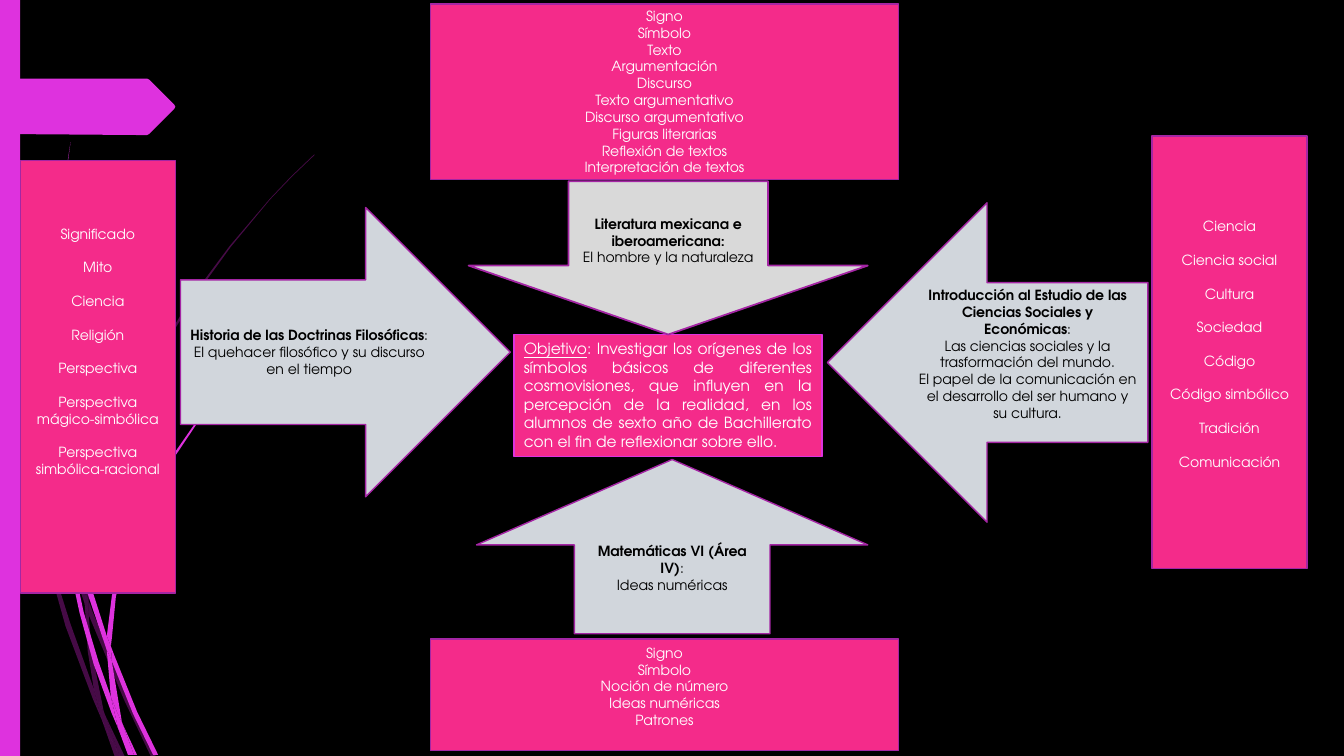
from lxml import etree
from pptx import Presentation
from pptx.dml.color import RGBColor
from pptx.enum.shapes import MSO_SHAPE
from pptx.enum.text import MSO_ANCHOR, PP_ALIGN
from pptx.oxml.ns import qn
from pptx.util import Cm, Pt

RECT = MSO_SHAPE.RECTANGLE
LEFT, RIGHT = MSO_SHAPE.LEFT_ARROW, MSO_SHAPE.RIGHT_ARROW
UP, DOWN = MSO_SHAPE.UP_ARROW, MSO_SHAPE.DOWN_ARROW
CENTER, JUSTIFY = PP_ALIGN.CENTER, PP_ALIGN.JUSTIFY
TOP, MIDDLE = MSO_ANCHOR.TOP, MSO_ANCHOR.MIDDLE

FONT = "TeX Gyre Adventor"
COLORS = {
    "back": "000000", "orchid": "DE32DE", "purple": "B01CB0", "edge": "A425A4",
    "pink": "F42B8A", "mist": "D1D6DC", "gray": "D9D9D9",
    "white": "FFFFFF", "black": "000000",
}
LINE = 12  # height in points of one line of 10 pt text
UNIT = Cm(2.54) / 100  # outline points are hundredths of an inch

DARK_STRANDS = [
    [(11, 350), (9, 322), (0, 282), (0, 299), (10, 344)],
    [(58, 522), (84, 599), (85, 586), (62, 520), (36, 434), (14, 345), (17, 376), (36, 450)],
    [(92, 607), (88, 596), (88, 610), (123, 694), (150, 751), (155, 751), (127, 692)],
    [(119, 751), (124, 751), (105, 711)],
    [(93, 683), (70, 619), (47, 546), (31, 469), (17, 376), (11, 350), (28, 470),
     (44, 546), (65, 621), (92, 693), (101, 714), (99, 707)],
    [(84, 599), (87, 646), (93, 683), (96, 692), (105, 711), (103, 706), (91, 646),
     (88, 610), (88, 608)],
    [(88, 584), (94, 522), (110, 462), (132, 405), (160, 349), (192, 296), (229, 245),
     (268, 198), (290, 175), (312, 154), (312, 153), (289, 175), (268, 197), (228, 244),
     (190, 295), (158, 348), (130, 404), (107, 461), (91, 522), (85, 584), (88, 596)],
    [(101, 714), (114, 751), (119, 751)],
    [(88, 608), (88, 596), (85, 586), (84, 599)],
    [(96, 692), (93, 683), (99, 707), (101, 714), (119, 751), (105, 711)],
]
BRIGHT_STRANDS = [
    [(7, 110), (17, 233), (33, 355), (56, 477), (57, 481), (55, 453), (36, 355),
     (19, 232), (8, 109), (5, 48), (4, 0), (3, 0), (4, 48)],
    [(88, 592), (106, 645), (106, 631), (93, 590), (75, 532), (60, 472), (64, 505), (75, 549)],
    [(113, 649), (110, 641), (111, 656), (132, 708), (152, 749), (157, 749), (136, 706)],
    [(110, 691), (98, 657), (83, 607), (72, 556), (64, 505), (57, 477), (68, 557),
     (79, 608), (93, 659), (111, 708), (117, 722), (116, 717)],
    [(60, 472), (58, 453), (54, 349), (58, 245), (63, 193), (70, 141), (62, 193),
     (56, 245), (52, 349), (55, 449)],
    [(133, 749), (136, 749), (122, 719)],
    [(111, 633), (115, 592), (125, 552), (158, 476), (205, 406), (231, 374), (245, 359),
     (261, 344), (260, 344), (245, 358), (231, 373), (204, 405), (156, 474), (122, 551),
     (111, 591), (106, 631), (110, 641)],
    [(117, 722), (127, 749), (131, 749)],
    [(106, 645), (110, 691), (116, 706), (122, 719), (121, 716), (111, 656), (109, 651)],
    [(106, 645), (109, 651), (111, 656), (110, 641), (106, 631)],
    [(116, 706), (110, 691), (116, 717), (117, 722), (130, 749), (133, 749), (122, 719)],
]
PAGE_TAG = [(173, 108), (148, 133), (146, 134), (136, 134), (0, 133), (0, 78),
            (146, 78), (148, 79), (173, 104), (174, 106)]


def rgb(name):
    return RGBColor.from_string(COLORS[name])


def paint(shape, fill, edge=None, weight=1):
    shape.shadow.inherit = False
    shape.fill.solid()
    shape.fill.fore_color.rgb = rgb(fill)
    if edge:
        shape.line.color.rgb = rgb(edge)
        shape.line.width = Pt(weight)
    else:
        shape.line.fill.background()


def add_outline(page, points, fill, opacity=None):
    builder = page.shapes.build_freeform(*points[0], scale=UNIT)
    builder.add_line_segments(points[1:], close=True)
    shape = builder.convert_to_shape()
    paint(shape, fill)
    if opacity:
        color = shape.fill._xPr.find(qn("a:solidFill"))[0]
        etree.SubElement(color, qn("a:alpha")).set("val", str(opacity * 1000))


def add_box(page, kind, place, fill, edge="edge", weight=1, head=None, raised=0):
    """Add a preset shape; raised is the room left under the text, in lines."""
    box = page.shapes.add_shape(kind, *[Cm(length) for length in place])
    paint(box, fill, edge, weight)
    if head:
        box.adjustments[1] = head
    frame = box.text_frame
    frame.word_wrap = True
    frame.vertical_anchor = MIDDLE
    frame.margin_bottom = Cm(0.13) + Pt(raised * LINE)
    return box


def add_para(box, spans, color, size=10, align=CENTER, before=0):
    """Write one paragraph from (text, bold, underline) spans."""
    para = box.text_frame.paragraphs[0]
    if para.runs:
        para = box.text_frame.add_paragraph()
    para.alignment = align
    para.space_before = Pt(before)
    for text, bold, underline in spans:
        span = para.add_run()
        span.text = text
        span.font.name = FONT
        span.font.size = Pt(size)
        span.font.bold = bold
        span.font.underline = underline
        span.font.color.rgb = rgb(color)


def add_concepts(page, place, groups, raised=0):
    """Add a pink box whose groups of lines stand one line apart."""
    box = add_box(page, RECT, place, "pink", raised=raised)
    for number, group in enumerate(groups):
        for row, line in enumerate(group):
            before = LINE if number and not row else 0
            add_para(box, [(line, False, False)], "white", before=before)


def add_subject(page, kind, place, title, mark, lines, fill="mist", **look):
    box = add_box(page, kind, place, fill, **look)
    spans = [(title, True, False)]
    if mark:
        spans.append((mark, False, False))
    add_para(box, spans, "black")
    for line in lines:
        add_para(box, [(line, False, False)], "black")


def add_goal(page):
    box = add_box(page, RECT, (12.95, 8.43, 7.77, 3.07), "pink", edge="orchid")
    box.text_frame.vertical_anchor = TOP
    goal = (": Investigar los orígenes de los símbolos básicos de diferentes "
            "cosmovisiones, que influyen en la percepción de la realidad, en los alumnos "
            "de sexto año de Bachillerato con el fin de reflexionar sobre ello.")
    add_para(box, [("Objetivo", False, True), (goal, False, False)], "white", 11, JUSTIFY)


def main():
    deck = Presentation()
    deck.slide_width, deck.slide_height = Cm(33.87), Cm(19.05)
    page = deck.slides.add_slide(deck.slide_layouts[6])
    page.background.fill.solid()
    page.background.fill.fore_color.rgb = rgb("back")

    # Decoration on the left
    for strand in DARK_STRANDS:
        add_outline(page, strand, "purple", opacity=40)
    for strand in BRIGHT_STRANDS:
        add_outline(page, strand, "orchid")
    add_box(page, RECT, (0, 0, 0.51, 19.05), "orchid", edge=None)
    add_outline(page, PAGE_TAG, "orchid")

    # Objective in the middle
    add_goal(page)

    # Subjects pointing at the objective, each with its concepts
    add_subject(page, LEFT, (20.85, 5.11, 8.08, 8.05),
                "Introducción al Estudio de las Ciencias Sociales y Económicas", ":",
                ["Las ciencias sociales y la", "trasformación del mundo.",
                 "El papel de la comunicación en el desarrollo del ser humano y",
                 "su cultura."], raised=1)
    add_concepts(page, (29.03, 3.43, 3.91, 10.9),
                 [["Ciencia"], ["Ciencia social"], ["Cultura"], ["Sociedad"], ["Código"],
                  ["Código simbólico"], ["Tradición"], ["Comunicación"]], raised=1)
    add_subject(page, UP, (12.01, 11.58, 9.86, 4.39), "Matemáticas VI (Área IV)", ":",
                ["Ideas numéricas"], head=0.49)
    add_concepts(page, (10.85, 16.1, 11.79, 2.82),
                 [["Signo", "Símbolo", "Noción de número", "Ideas numéricas", "Patrones"]],
                 raised=1)
    add_subject(page, RIGHT, (4.55, 5.23, 8.31, 7.29),
                "Historia de las Doctrinas Filosóficas", ":",
                ["El quehacer filosófico y su discurso en el tiempo"])
    add_concepts(page, (0.51, 4.04, 3.91, 10.9),
                 [["Significado"], ["Mito"], ["Ciencia"], ["Religión"], ["Perspectiva"],
                  ["Perspectiva", "mágico-simbólica"],
                  ["Perspectiva", "simbólica-racional"]], raised=3)
    add_subject(page, DOWN, (11.81, 4.57, 10.06, 3.86),
                "Literatura mexicana e iberoamericana:", "",
                ["El hombre y la naturaleza"], fill="gray", weight=1.25, head=0.45)
    add_concepts(page, (10.85, 0.1, 11.79, 4.42),
                 [["Signo", "Símbolo", "Texto", "Argumentación", "Discurso",
                   "Texto argumentativo", "Discurso argumentativo", "Figuras literarias",
                   "Reflexión de textos", "Interpretación de textos"]])

    deck.save("out.pptx")


if __name__ == "__main__":
    main()
